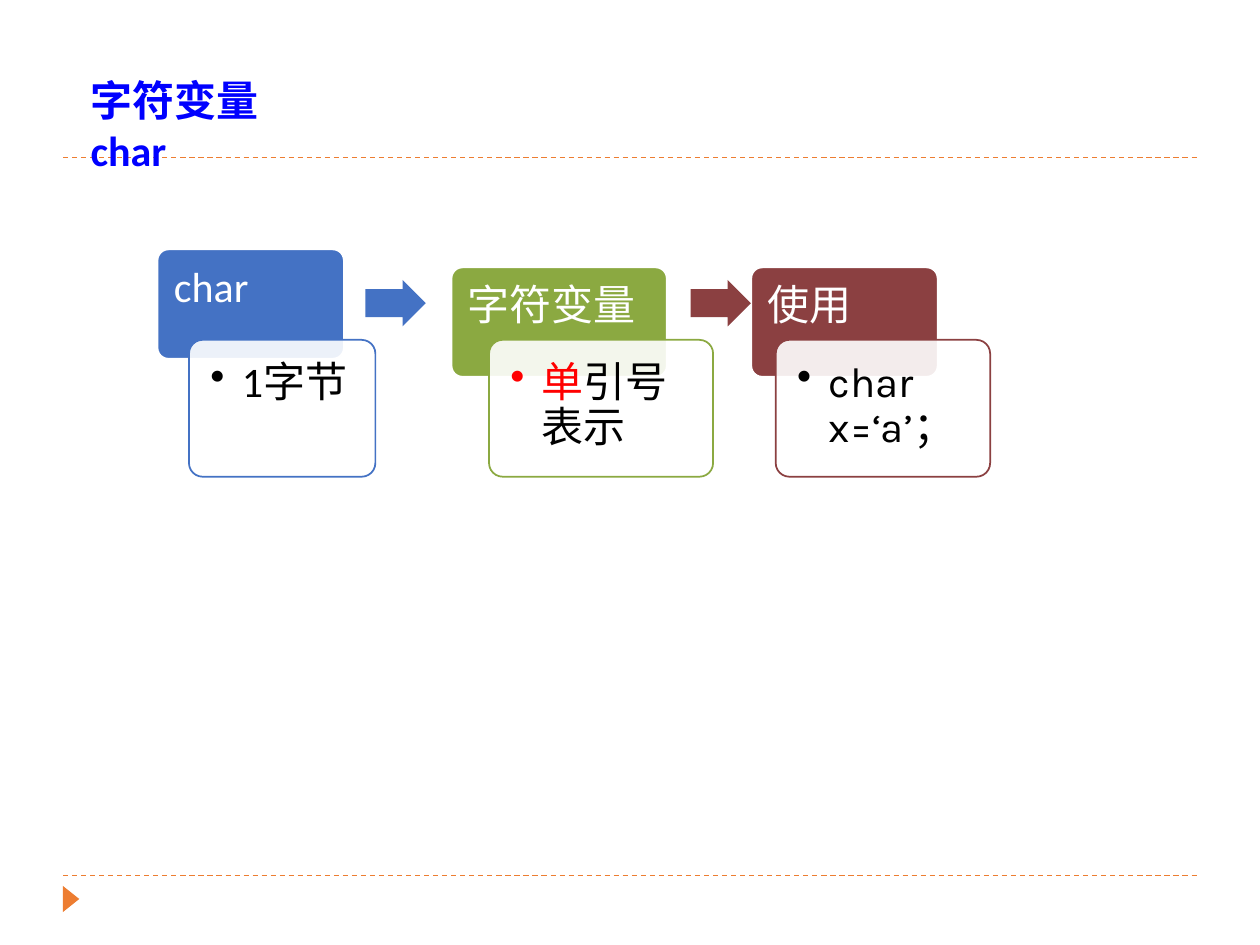
import pptx
import pptx.util
import pptx.dml.color
import pptx.enum.dml
import pptx.enum.shapes
import pptx.enum.text
import pptx.oxml.ns
import lxml.etree

Pt = pptx.util.Pt
SHAPES = pptx.enum.shapes.MSO_SHAPE

THEME = {
    "blue": "4472C4", "green": "8BA941", "red": "8B4041", "accent": "ED7D31",
    "title": "0000FF", "alert": "FF0000", "text": "000000", "paper": "FFFFFF",
    "font": "Calibri", "code_font": "Karla", "size": 24,
}

TITLE = "字符变量 char"
STEPS = [
    {"heading": "char", "detail": [("1字节", "text")], "font": "font", "color": "blue",
     "head": (90, 142.5, 106.5), "body": (108, 106.5)},
    {"heading": "字符变量", "detail": [("单", "alert"), ("引号表示", "text")], "font": "font",
     "color": "green", "head": (258, 152.8, 123), "body": (279.5, 128)},
    {"heading": "使用", "detail": [("char x=‘a’；", "text")], "font": "code_font", "color": "red",
     "head": (429.3, 152.8, 106.5), "body": (443.3, 122.5)},
]
ARROWS = [(208.8, "blue"), (394.6, "red")]
RULES = [500.4, 90]

HEAD_HEIGHT, BODY_TOP, BODY_HEIGHT = 62.5, 194.2, 78.2
CORNER = 0.1
CORNER_INSET = 0.29
HEAD_INSET, BODY_INSET = 9.4, 12.2
BULLET_INDENT = 18


def rgb(name):
    return pptx.dml.color.RGBColor.from_string(THEME[name])


def add_block(slide, kind, box, fill, line=None):
    block = slide.shapes.add_shape(kind, *map(Pt, box))
    block.shadow.inherit = False
    block.fill.solid()
    block.fill.fore_color.rgb = rgb(fill)
    if line:
        block.line.color.rgb = rgb(line)
        block.line.width = Pt(1)
    else:
        block.line.fill.background()
    return block


def add_card(slide, box, fill, line, inset):
    card = add_block(slide, SHAPES.ROUNDED_RECTANGLE, box, fill, line)
    card.adjustments[0] = CORNER
    margin = Pt(inset - CORNER * CORNER_INSET * min(box[2:]))
    frame = card.text_frame
    frame.word_wrap = True
    frame.vertical_anchor = pptx.enum.text.MSO_ANCHOR.TOP
    frame.margin_left = frame.margin_right = margin
    frame.margin_top = frame.margin_bottom = margin
    paragraph = frame.paragraphs[0]
    paragraph.alignment = pptx.enum.text.PP_ALIGN.LEFT
    paragraph.line_spacing = 0.9
    return card


def style_run(run, color, font="font", bold=False):
    run.font.name = THEME[font]
    run.font.size = Pt(THEME["size"])
    run.font.bold = bold
    run.font.color.rgb = rgb(color)


def add_bullet(paragraph):
    properties = paragraph._p.get_or_add_pPr()
    properties.set("marL", str(Pt(BULLET_INDENT)))
    properties.set("indent", str(-Pt(BULLET_INDENT)))
    bullet = lxml.etree.SubElement(properties, pptx.oxml.ns.qn("a:buChar"))
    bullet.set("char", "•")


def add_rule(slide, y):
    rule = slide.shapes.add_connector(
        pptx.enum.shapes.MSO_CONNECTOR.STRAIGHT, Pt(36), Pt(y), Pt(684), Pt(y))
    rule.line.color.rgb = rgb("accent")
    rule.line.width = Pt(0.75)
    rule.line.dash_style = pptx.enum.dml.MSO_LINE.DASH
    lxml.etree.SubElement(rule._element.spPr, pptx.oxml.ns.qn("a:effectLst"))


def add_step(slide, step):
    left, top, width = step["head"]
    head = add_card(slide, (left, top, width, HEAD_HEIGHT), step["color"], "paper", HEAD_INSET)
    head.text_frame.paragraphs[0].text = step["heading"]
    style_run(head.text_frame.paragraphs[0].runs[0], "paper")

    left, width = step["body"]
    body = add_card(slide, (left, BODY_TOP, width, BODY_HEIGHT), "paper", step["color"], BODY_INSET)
    fill_color = body.fill._xPr.find(".//" + pptx.oxml.ns.qn("a:srgbClr"))
    lxml.etree.SubElement(fill_color, pptx.oxml.ns.qn("a:alpha")).set("val", "90000")
    detail = body.text_frame.paragraphs[0]
    add_bullet(detail)
    for words, color in step["detail"]:
        run = detail.add_run()
        run.text = words
        style_run(run, color, step["font"])


def format_title(slide):
    title = slide.shapes.title
    title.left, title.top, title.width, title.height = map(Pt, (44.6, 38.9, 159, 36))
    frame = title.text_frame
    frame.text = TITLE
    frame.word_wrap = True
    frame.auto_size = pptx.enum.text.MSO_AUTO_SIZE.NONE
    frame.vertical_anchor = pptx.enum.text.MSO_ANCHOR.TOP
    frame.paragraphs[0].alignment = pptx.enum.text.PP_ALIGN.LEFT
    style_run(frame.paragraphs[0].runs[0], "title", bold=True)
    slide.shapes._spTree.append(title._element)


def main():
    deck = pptx.Presentation()
    deck.slide_width, deck.slide_height = Pt(720), Pt(540)
    slide = deck.slides.add_slide(deck.slide_layouts[5])

    for y in RULES:
        add_rule(slide, y)
    marker = add_block(slide, SHAPES.ISOSCELES_TRIANGLE, (33.1, 509, 15, 9.4), "accent")
    marker.rotation = 90

    for step in STEPS:
        add_step(slide, step)
    for left, color in ARROWS:
        arrow = add_block(slide, SHAPES.RIGHT_ARROW, (left, 160, 34.5, 26.6), color)
        arrow.adjustments[0] = 0.6
        arrow.adjustments[1] = 0.5
    format_title(slide)
    deck.save("out.pptx")


if __name__ == "__main__":
    main()
